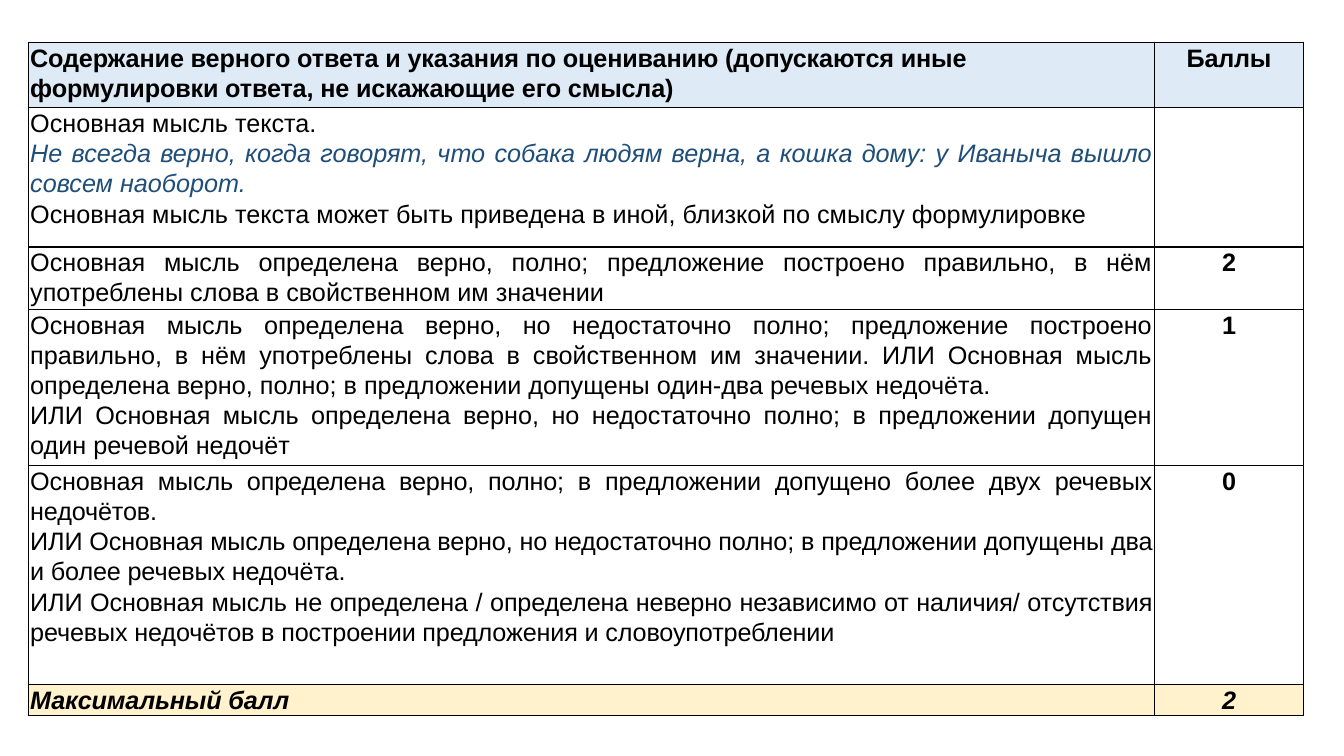
from dataclasses import dataclass

from lxml import etree
from pptx import Presentation
from pptx import util as u
from pptx.dml.color import RGBColor
from pptx.enum import text
from pptx.oxml.ns import qn


@dataclass(frozen=True)
class Theme:
    font: str = "Arial"
    size: float = 18
    line_spacing: float = 1.07
    ink: str = "000000"
    sample: str = "1F4E79"
    header: str = "DEEBF7"
    body: str = "FFFFFF"
    total: str = "FFF2CC"
    border: float = 1
    inset: float = 0.02


THEME = Theme()
SLIDE_W, SLIDE_H = 13.33, 7.5
LEFT, TOP = 0.28, 0.42
COLUMNS = (11.17, 1.48)
ROWS = (0.65, 1.38, 0.62, 1.55, 2.17, 0.31)

LEFT_ALIGN = text.PP_ALIGN.LEFT
CENTER = text.PP_ALIGN.CENTER
JUSTIFY = text.PP_ALIGN.JUSTIFY

HEADING = ("Содержание верного ответа и указания по оцениванию "
           "(допускаются иные формулировки ответа, не искажающие его смысла)")
MAIN_IDEA = "Основная мысль текста."
SAMPLE_ANSWER = ("Не всегда верно, когда говорят, что собака людям верна, "
                 "а кошка дому: у Иваныча вышло совсем наоборот.")
OTHER_WORDING = ("Основная мысль текста может быть приведена в иной, "
                 "близкой по смыслу формулировке")

# Criteria paragraphs and the points they earn
CRITERIA = (
    (("Основная мысль определена верно, полно; предложение построено правильно, "
      "в нём употреблены слова в свойственном им значении",), "2"),
    (("Основная мысль определена верно, но недостаточно полно; предложение "
      "построено правильно, в нём употреблены слова в свойственном им значении. "
      "ИЛИ Основная мысль определена верно, полно; в предложении допущены "
      "один-два речевых недочёта.",
      "ИЛИ Основная мысль определена верно, но недостаточно полно; в предложении "
      "допущен один речевой недочёт"), "1"),
    (("Основная мысль определена верно, полно; в предложении допущено более двух "
      "речевых недочётов.",
      "ИЛИ Основная мысль определена верно, но недостаточно полно; в предложении "
      "допущены два и более речевых недочёта.",
      "ИЛИ Основная мысль не определена / определена неверно независимо от "
      "наличия/ отсутствия речевых недочётов в построении предложения и "
      "словоупотреблении"), "0"),
)


def write(paragraph, words, *, align=LEFT_ALIGN, bold=False, italic=False,
          color=THEME.ink, spacing=0):
    """Fill a paragraph; spacing is the letter spacing in points."""
    paragraph.alignment = align
    paragraph.line_spacing = THEME.line_spacing
    run = paragraph.add_run()
    run.text = words
    run.font.name = THEME.font
    run.font.size = u.Pt(THEME.size)
    run.font.bold = bold
    run.font.italic = italic
    run.font.color.rgb = RGBColor.from_string(color)
    if spacing:
        run.font._element.set("spc", str(round(spacing * 100)))


def add_paragraphs(cell, paragraphs, **style):
    """Write (words, own format) pairs, the first into the existing paragraph."""
    frame = cell.text_frame
    for index, (words, own) in enumerate(paragraphs):
        paragraph = frame.add_paragraph() if index else frame.paragraphs[0]
        write(paragraph, words, **{**style, **own})


def add_borders(cell):
    properties = cell._tc.get_or_add_tcPr()
    for index, side in enumerate(("a:lnL", "a:lnR", "a:lnT", "a:lnB")):
        line = etree.Element(qn(side), w=str(u.Pt(THEME.border)))
        fill = etree.SubElement(line, qn("a:solidFill"))
        etree.SubElement(fill, qn("a:srgbClr"), val=THEME.border_color
                         if hasattr(THEME, "border_color") else THEME.ink)
        properties.insert(index, line)


def format_cell(cell, fill):
    cell.margin_left = cell.margin_right = u.Inches(THEME.inset)
    cell.margin_top = cell.margin_bottom = 0
    cell.fill.solid()
    cell.fill.fore_color.rgb = RGBColor.from_string(fill)
    add_borders(cell)


def add_grid(slide):
    frame = slide.shapes.add_table(
        len(ROWS), len(COLUMNS), u.Inches(LEFT), u.Inches(TOP),
        u.Inches(sum(COLUMNS)), u.Inches(sum(ROWS)))
    grid = frame.table
    grid.horz_banding = False
    grid.first_row = False
    for column, width in zip(grid.columns, COLUMNS):
        column.width = u.Inches(width)
    for row, height in zip(grid.rows, ROWS):
        row.height = u.Inches(height)
    fills = [THEME.header] + [THEME.body] * (len(ROWS) - 2) + [THEME.total]
    for row, fill in zip(grid.rows, fills):
        for cell in row.cells:
            format_cell(cell, fill)
    return grid


def add_row(grid, index, paragraphs, points, points_style, **style):
    add_paragraphs(grid.cell(index, 0), paragraphs, **style)
    if points:
        write(grid.cell(index, 1).text_frame.paragraphs[0], points,
              align=CENTER, bold=True, **points_style)


def main():
    deck = Presentation()
    deck.slide_width, deck.slide_height = u.Inches(SLIDE_W), u.Inches(SLIDE_H)
    slide = deck.slides.add_slide(deck.slide_layouts[6])
    grid = add_grid(slide)

    # Header
    add_row(grid, 0, [(HEADING, {})], "Баллы", {"spacing": -0.2},
            bold=True, spacing=-0.1)

    # Sample answer
    add_row(grid, 1, [(MAIN_IDEA, {}),
                      (SAMPLE_ANSWER, {"italic": True, "color": THEME.sample}),
                      (OTHER_WORDING, {})], "", {}, align=JUSTIFY)

    # Criteria
    for index, (paragraphs, points) in enumerate(CRITERIA, start=2):
        add_row(grid, index, [(words, {}) for words in paragraphs], points, {},
                align=JUSTIFY, spacing=-0.1 if points == "0" else 0)

    # Maximum score
    add_row(grid, len(ROWS) - 1, [("Максимальный балл", {})], "2",
            {"italic": True}, bold=True, italic=True, spacing=-0.1)

    deck.save("out.pptx")


if __name__ == "__main__":
    main()
